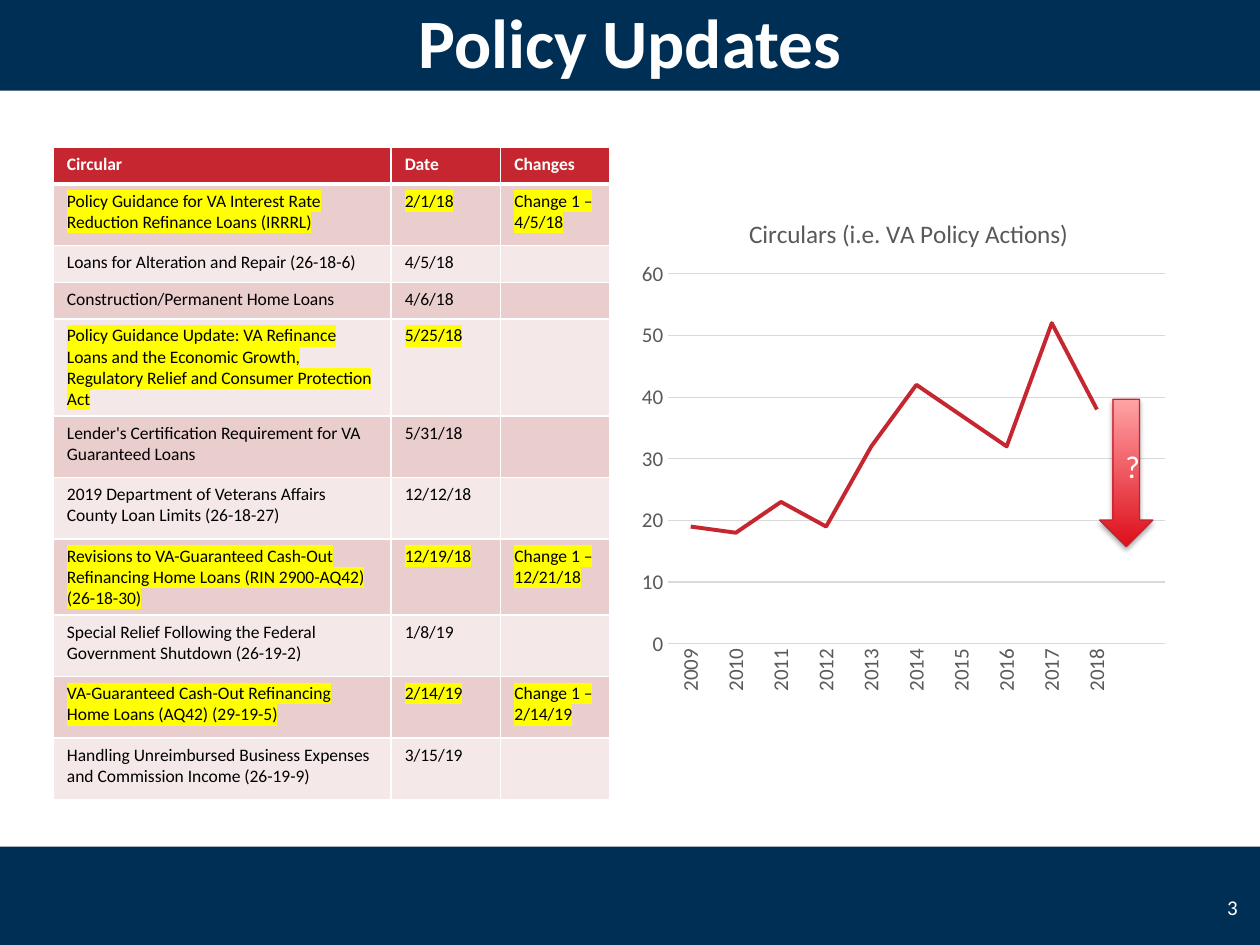
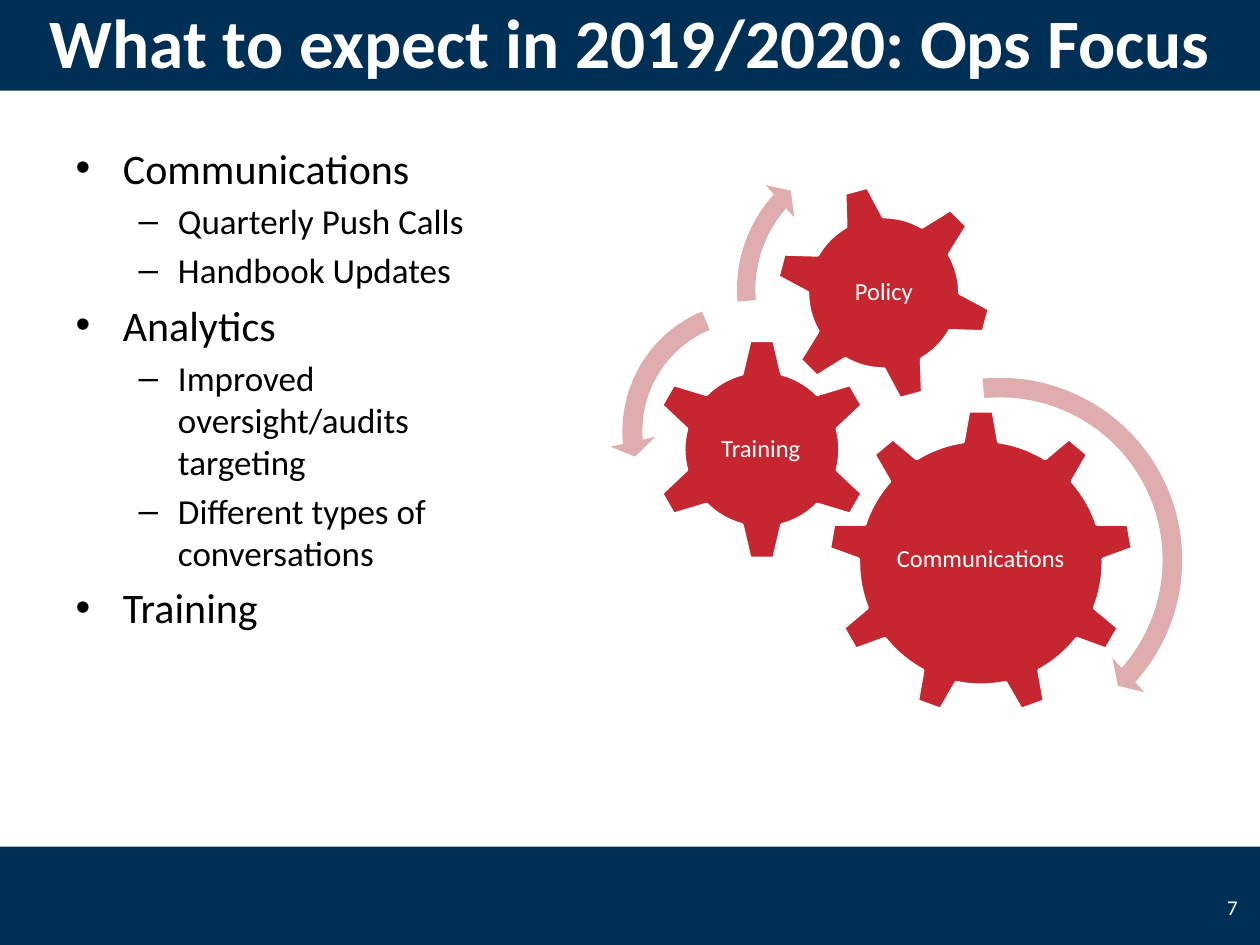
from lxml.etree import SubElement
from pptx import Presentation
from pptx.chart.data import CategoryChartData
from pptx.dml.color import RGBColor
from pptx.enum.chart import XL_CHART_TYPE, XL_TICK_MARK
from pptx.enum.shapes import MSO_SHAPE
from pptx.enum.text import MSO_ANCHOR, MSO_AUTO_SIZE, PP_ALIGN
from pptx.oxml.ns import qn
from pptx.oxml.xmlchemy import OxmlElement
from pptx.util import Cm, Pt

FONT = "Calibri"
COLORS = {
    "navy": "002F56",
    "red": "C62630",
    "pink": "DFADAE",
    "row_dark": "EACDCD",
    "row_light": "F5E8E8",
    "white": "FFFFFF",
    "black": "000000",
    "yellow": "FFFF00",
    "axis_text": "595959",
    "grid": "D9D9D9",
    "arrow_bottom": "DE0E1B",
    "arrow_top": "FFA3A5",
    "arrow_line": "C6212C",
}
RGB = {name: RGBColor.from_string(value) for name, value in COLORS.items()}


def write_text(paragraph, text, size=12, color="white", bold=False, align=None,
               highlight=None, line_spacing=None):
    paragraph.alignment = align
    paragraph.line_spacing = line_spacing
    run = paragraph.add_run()
    run.text = text
    run.font.size = Pt(size)
    run.font.bold = bold
    run.font.color.rgb = RGB[color]
    run.font.name = FONT
    if highlight:
        marker = OxmlElement("a:highlight")
        SubElement(marker, qn("a:srgbClr"), val=COLORS[highlight])
        run.font.fill._xPr.find(qn("a:solidFill")).addnext(marker)


def add_filled_shape(slide, kind, box, color, line=None):
    shape = slide.shapes.add_shape(kind, *[Cm(length) for length in box])
    shape.shadow.inherit = False
    shape.fill.solid()
    shape.fill.fore_color.rgb = RGB[color]
    if line:
        shape.line.color.rgb = RGB[line]
        shape.line.width = Pt(2)
    else:
        shape.line.fill.background()
    return shape


presentation = Presentation()
presentation.slide_width = Cm(25.4)
presentation.slide_height = Cm(19.05)

layouts = presentation.slide_layouts
policy_slide = presentation.slides.add_slide(layouts.get_by_name("Title Only"))
focus_slide = presentation.slides.add_slide(layouts.get_by_name("Title and Content"))

title_box = (0, -0.2, 25.4, 2.03)
footer_box = (0, 17.07, 25.4, 2.03)
for box in (title_box, footer_box):
    band = add_filled_shape(policy_slide, MSO_SHAPE.RECTANGLE, box, "navy")
    presentation.slide_master.shapes.element.insert(2, band.element)

for slide, title_text, number in (
    (policy_slide, "Policy Updates", "3"),
    (focus_slide, "What to expect in 2019/2020: Ops Focus", "7"),
):
    title = slide.shapes.title
    title.left, title.top, title.width, title.height = [Cm(length) for length in title_box]
    title.text_frame.auto_size = MSO_AUTO_SIZE.NONE
    title.text_frame.vertical_anchor = MSO_ANCHOR.MIDDLE
    write_text(title.text_frame.paragraphs[0], title_text, size=39.6, bold=True,
               align=PP_ALIGN.CENTER)
    number_box = slide.shapes.add_textbox(Cm(24.13), Cm(17.78), Cm(1.07), Cm(1.02))
    number_box.text_frame.word_wrap = True
    number_box.text_frame.vertical_anchor = MSO_ANCHOR.MIDDLE
    write_text(number_box.text_frame.paragraphs[0], number, align=PP_ALIGN.RIGHT)

circulars = [
    ("Circular", "Date", "Changes"),
    ("Policy Guidance for VA Interest Rate Reduction Refinance Loans (IRRRL)",
     "2/1/18", "Change 1 – 4/5/18"),
    ("Loans for Alteration and Repair (26-18-6)", "4/5/18", ""),
    ("Construction/Permanent Home Loans", "4/6/18", ""),
    ("Policy Guidance Update: VA Refinance Loans and the Economic Growth, "
     "Regulatory Relief and Consumer Protection Act", "5/25/18", ""),
    ("Lender's Certification Requirement for VA Guaranteed Loans", "5/31/18", ""),
    ("2019 Department of Veterans Affairs County Loan Limits (26-18-27)", "12/12/18", ""),
    ("Revisions to VA-Guaranteed Cash-Out Refinancing Home Loans (RIN 2900-AQ42) (26-18-30)",
     "12/19/18", "Change 1 – 12/21/18"),
    ("Special Relief Following the Federal Government Shutdown (26-19-2)", "1/8/19", ""),
    ("VA-Guaranteed Cash-Out Refinancing Home Loans (AQ42) (29-19-5)",
     "2/14/19", "Change 1 – 2/14/19"),
    ("Handling Unreimbursed Business Expenses and Commission Income (26-19-9)",
     "3/15/19", ""),
]
highlighted_rows = {1, 4, 7, 9}
row_heights = {0: 0.74, 2: 0.74, 3: 0.74, 4: 1.75}

table = policy_slide.shapes.add_table(
    len(circulars), 3, Cm(1.07), Cm(2.97), Cm(11.23), Cm(12.7)).table
for column, width in zip(table.columns, (6.81, 2.21, 2.21)):
    column.width = Cm(width)
for row_index, circular in enumerate(circulars):
    is_header = row_index == 0
    table.rows[row_index].height = Cm(row_heights.get(row_index, 1.24))
    row_color = "red" if is_header else "row_dark" if row_index % 2 else "row_light"
    for column_index, text in enumerate(circular):
        cell = table.cell(row_index, column_index)
        cell.margin_left = cell.margin_right = Cm(0.28)
        cell.margin_top = cell.margin_bottom = Cm(0.13)
        paragraph = cell.text_frame.paragraphs[0]
        if text:
            write_text(paragraph, text, size=10, bold=is_header,
                       color="white" if is_header else "black",
                       highlight="yellow" if row_index in highlighted_rows else None)
        else:
            SubElement(paragraph._p, qn("a:endParaRPr"), sz="1000")
        properties = cell._tc.get_or_add_tcPr()
        for side in "LRTB":
            thick = (is_header and side == "B") or (row_index == 1 and side == "T")
            border = SubElement(properties, qn(f"a:ln{side}"), w=str(Pt(3 if thick else 1)))
            border_fill = SubElement(border, qn("a:solidFill"))
            SubElement(border_fill, qn("a:srgbClr"), val=COLORS["white"])
        cell.fill.solid()
        cell.fill.fore_color.rgb = RGB[row_color]

chart_data = CategoryChartData()
chart_data.categories = [str(year) for year in range(2009, 2019)] + [""]
chart_data.add_series("Series 1", (19, 18, 23, 19, 32, 42, 37, 32, 52, 38, None))
chart = policy_slide.shapes.add_chart(
    XL_CHART_TYPE.LINE, Cm(12.7), Cm(3.76), Cm(11), Cm(10.36), chart_data).chart
chart.font.name = FONT
chart.font.size = Pt(12)
chart.has_legend = False
chart.has_title = True
write_text(chart.chart_title.text_frame.paragraphs[0],
           "Circulars (i.e. VA Policy Actions)", size=14.4, color="axis_text")

plot = chart.plots[0]
plot.vary_by_categories = False
series = plot.series[0]
series.smooth = False
series.format.line.color.rgb = RGB["red"]
series.format.line.width = Pt(2.25)

for axis in (chart.category_axis, chart.value_axis):
    axis.major_tick_mark = axis.minor_tick_mark = XL_TICK_MARK.NONE
    axis.tick_labels.font.name = FONT
    axis.tick_labels.font.size = Pt(12)
    axis.tick_labels.font.color.rgb = RGB["axis_text"]
chart.category_axis._element.find(qn("c:txPr")).find(qn("a:bodyPr")).set("rot", "-5400000")
chart.value_axis.minimum_scale = 0
chart.value_axis.maximum_scale = 60
chart.value_axis.major_unit = 10
chart.value_axis.format.line.fill.background()
for line in (chart.category_axis.format.line, chart.value_axis.major_gridlines.format.line):
    line.color.rgb = RGB["grid"]
    line.width = Pt(0.75)

title_element = chart.chart_title._element
plot_area = plot._element.getparent()
title_layout = {"xMode": "edge", "yMode": "edge", "x": 0.21, "y": 0.05}
plot_layout = {"layoutTarget": "inner", "xMode": "edge", "yMode": "edge",
               "x": 0.07, "y": 0.17, "w": 0.91, "h": 0.72}
for parent, position, settings in ((title_element, 1, title_layout),
                                   (plot_area, 0, plot_layout)):
    for old_layout in parent.findall(qn("c:layout")):
        parent.remove(old_layout)
    layout = OxmlElement("c:layout")
    manual_layout = SubElement(layout, qn("c:manualLayout"))
    for name, value in settings.items():
        SubElement(manual_layout, qn(f"c:{name}"), val=str(value))
    parent.insert(position, layout)

trend_arrow = add_filled_shape(
    policy_slide, MSO_SHAPE.DOWN_ARROW, (22.17, 8.05, 1.07, 2.97), "red", line="arrow_line")
trend_arrow.line.width = Pt(0.75)
trend_arrow.fill.gradient()
trend_arrow.fill.gradient_angle = 90
for stop, color in zip(trend_arrow.fill.gradient_stops, ("arrow_bottom", "arrow_top")):
    stop.color.rgb = RGB[color]
effects = trend_arrow.element.spPr.find(qn("a:effectLst"))
shadow = SubElement(effects, qn("a:outerShdw"), blurRad=str(Pt(3.1)), dist=str(Pt(1.8)),
                    dir="5400000", rotWithShape="0")
shadow_color = SubElement(shadow, qn("a:srgbClr"), val=COLORS["black"])
SubElement(shadow_color, qn("a:alpha"), val="35000")
trend_arrow.text_frame.vertical_anchor = MSO_ANCHOR.MIDDLE
write_text(trend_arrow.text_frame.paragraphs[0], "?", size=18, align=PP_ALIGN.CENTER)

body = focus_slide.placeholders[1]
body.left, body.top, body.width, body.height = Cm(1.27), Cm(2.74), Cm(9.32), Cm(12.57)
body.text_frame.auto_size = MSO_AUTO_SIZE.NONE
focus_points = [
    (0, "Communications"),
    (1, "Quarterly Push Calls"),
    (1, "Handbook Updates"),
    (0, "Analytics"),
    (1, "Improved oversight/audits targeting"),
    (1, "Different types of conversations"),
    (0, "Training"),
]
for index, (level, text) in enumerate(focus_points):
    paragraph = body.text_frame.add_paragraph() if index else body.text_frame.paragraphs[0]
    paragraph.level = level
    write_text(paragraph, text, size=20 if level else 24, color="black")
body.text_frame.paragraphs[0].space_before = Pt(0)

gears = [
    ("Communications", MSO_SHAPE.GEAR_9, (16.69, 8.26, 6.17), 0, (17.93, 9.7, 3.68, 3.18)),
    ("Training", MSO_SHAPE.GEAR_6, (13.11, 6.81, 4.5), 0, (14.22, 7.95, 2.24, 2.21)),
    ("Policy", MSO_SHAPE.GEAR_6, (15.62, 3.71, 4.39), 345, (16.59, 4.67, 2.46, 2.46)),
]
for name, kind, (left, top, size), rotation, label_box in gears:
    gear = add_filled_shape(focus_slide, kind, (left, top, size, size), "red", line="white")
    gear.rotation = rotation
    label = focus_slide.shapes.add_textbox(*[Cm(length) for length in label_box])
    frame = label.text_frame
    frame.word_wrap = True
    frame.vertical_anchor = MSO_ANCHOR.MIDDLE
    frame.margin_left = frame.margin_right = frame.margin_top = frame.margin_bottom = Cm(0.05)
    write_text(frame.paragraphs[0], name, size=14, align=PP_ALIGN.CENTER, line_spacing=0.9)

turn_arrows = [
    (MSO_SHAPE.CIRCULAR_ARROW, (16.21, 7.34, 7.9), (0.05, 2.99, 25.12, 158.69, 0.06)),
    (MSO_SHAPE.LEFT_CIRCULAR_ARROW, (12.29, 5.82, 5.74), (0.07, 4.3, 104.89, 148.38, 0.08)),
    (MSO_SHAPE.CIRCULAR_ARROW, (14.61, 2.74, 6.2), (0.06, 3.94, 133.14, 105.08, 0.07)),
]
for kind, (left, top, size), adjustments in turn_arrows:
    turn_arrow = add_filled_shape(focus_slide, kind, (left, top, size, size), "pink")
    for index, value in enumerate(adjustments):
        turn_arrow.adjustments[index] = value

presentation.save("out.pptx")
